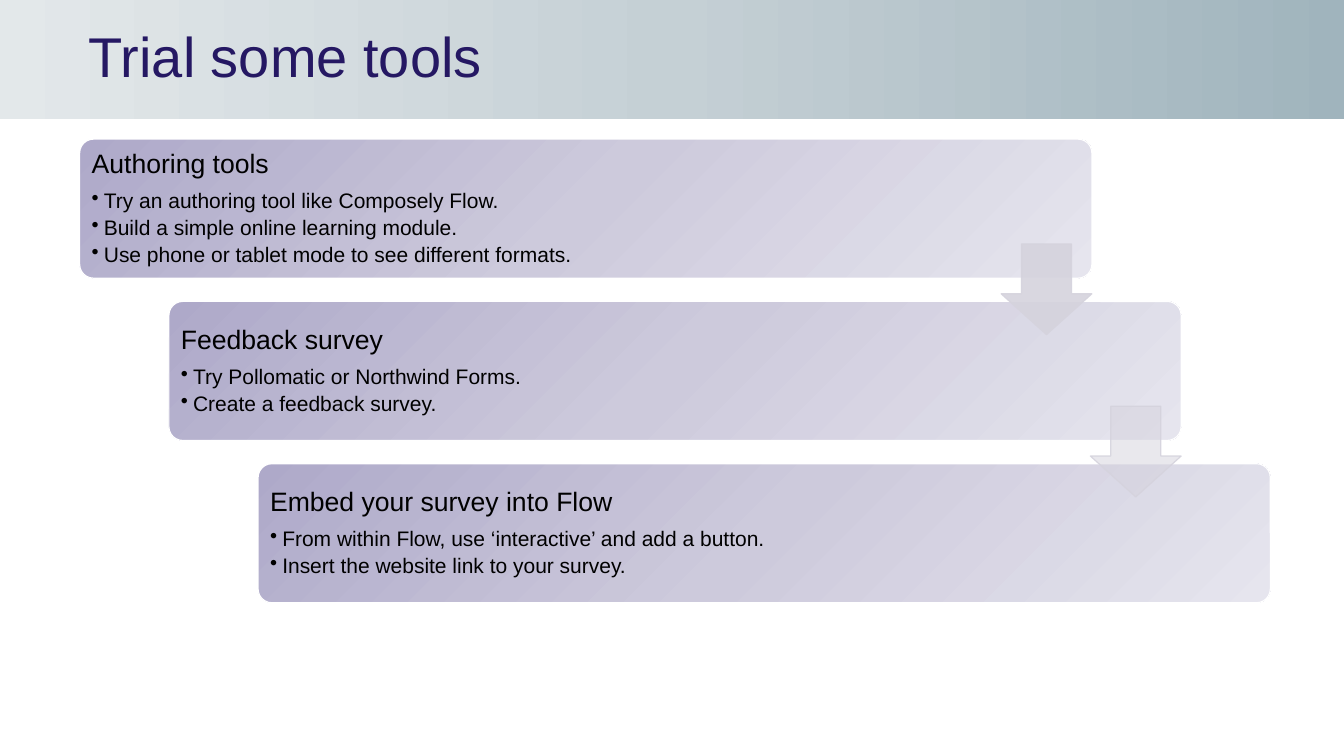
from pptx import Presentation
from pptx.dml.color import RGBColor as RGB
from pptx.enum.shapes import MSO_SHAPE as SHAPE
from pptx.enum.text import MSO_ANCHOR as ANCHOR, PP_ALIGN as ALIGN
from pptx.oxml import parse_xml
from pptx.oxml.ns import nsdecls, qn
from pptx.util import Inches, Pt
from lxml import etree

NAVY = RGB(0x25, 0x18, 0x63)
BLACK = RGB(0, 0, 0)
WHITE = RGB(0xFF, 0xFF, 0xFF)
ARROW_GREY = RGB(0xD5, 0xD3, 0xDD)
BANNER = [RGB(0xA0, 0xB4, 0xBD), RGB(0xC5, 0xD0, 0xD5), RGB(0xE3, 0xE8, 0xEA)]
LILAC = [RGB(0xAE, 0xA9, 0xC9), RGB(0xCD, 0xCA, 0xDC), RGB(0xE6, 0xE5, 0xEE)]

# Heading, text width, bullets
STEPS = [
    ("Authoring tools", 8.55,
     ["Try an authoring tool like Composely Flow.",
      "Build a simple online learning module.",
      "Use phone or tablet mode to see different formats."]),
    ("Feedback survey", 8.17,
     ["Try Pollomatic or Northwind Forms.",
      "Create a feedback survey."]),
    ("Embed your survey into Flow", 8.17,
     ["From within Flow, use ‘interactive’ and add a button.",
      "Insert the website link to your survey."]),
]
STEP_DX, STEP_DY = 0.885, 1.61
ARROW_ALPHAS = [90, 50]


def add_shape(s, kind, x, y, w, h):
    sp = s.shapes.add_shape(kind, Inches(x), Inches(y), Inches(w), Inches(h))
    sp.shadow.inherit = False
    return sp


def set_gradient(sp, colors, angle):
    """Fill with evenly spaced stops; angle is clockwise in degrees."""
    sp.fill.gradient()
    sp.fill.gradient_angle = -angle % 360
    stops = "".join(
        f'<a:gs pos="{i * 50000}"><a:srgbClr val="{color}"/></a:gs>'
        for i, color in enumerate(colors))
    old = next(sp.element.spPr.iter(qn("a:gsLst")))
    old.getparent().replace(
        old, parse_xml(f'<a:gsLst {nsdecls("a")}>{stops}</a:gsLst>'))


def set_alpha(color_format_parent, percent):
    for clr in color_format_parent.iter(qn("a:srgbClr")):
        etree.SubElement(clr, qn("a:alpha")).set("val", str(percent * 1000))


def add_run(p, text, size, color):
    r = p.add_run()
    r.text = text
    r.font.name = "Arial"
    r.font.size = Pt(size)
    r.font.color.rgb = color
    p.line_spacing = 0.9
    p.alignment = ALIGN.LEFT


def set_bullet(p):
    pPr = p._p.get_or_add_pPr()
    pPr.set("marL", str(Inches(0.12)))
    pPr.set("indent", str(-Inches(0.12)))
    etree.SubElement(pPr, qn("a:buChar")).set("char", "•")


def add_title(s, text):
    sp = add_shape(s, SHAPE.RECTANGLE, 0, 0, 13.33, 1.18)
    set_gradient(sp, BANNER, 180)
    sp.line.fill.background()
    tf = sp.text_frame
    tf.margin_left = Inches(0.88)
    tf.vertical_anchor = ANCHOR.MIDDLE
    add_run(tf.paragraphs[0], text, 40, NAVY)


def add_step(s, x, y, heading, text_width, bullets):
    # Card
    card = add_shape(s, SHAPE.ROUNDED_RECTANGLE, x, y, 10.04, 1.38)
    card.adjustments[0] = 0.1
    set_gradient(card, LILAC, 45)
    card.line.color.rgb = WHITE
    card.line.width = Pt(0.85)
    # Text
    box = s.shapes.add_textbox(Inches(x + 0.04), Inches(y + 0.04),
                               Inches(text_width), Inches(1.3))
    tf = box.text_frame
    tf.word_wrap = True
    tf.vertical_anchor = ANCHOR.MIDDLE
    tf.margin_left = tf.margin_right = Inches(0.08)
    tf.margin_top = tf.margin_bottom = Inches(0.08)
    p = tf.paragraphs[0]
    add_run(p, heading, 19, BLACK)
    p.space_after = Pt(8)
    for bullet in bullets:
        p = tf.add_paragraph()
        p.level = 1
        set_bullet(p)
        add_run(p, bullet, 15, BLACK)
        p.space_after = Pt(3)


def add_arrow(s, x, y, alpha):
    sp = add_shape(s, SHAPE.DOWN_ARROW, x, y, 0.9, 0.9)
    sp.adjustments[0] = 0.55
    sp.adjustments[1] = 0.45
    sp.fill.solid()
    sp.fill.fore_color.rgb = ARROW_GREY
    set_alpha(sp.element.spPr, alpha)
    sp.line.color.rgb = ARROW_GREY
    sp.line.width = Pt(0.85)
    set_alpha(sp.element.spPr.find(qn("a:ln")), 90)


def main():
    prs = Presentation()
    prs.slide_width, prs.slide_height = Inches(13.33), Inches(7.5)
    s = prs.slides.add_slide(prs.slide_layouts[6])
    add_title(s, "Trial some tools")
    for i, (heading, width, bullets) in enumerate(STEPS):
        add_step(s, 0.79 + i * STEP_DX, 1.38 + i * STEP_DY,
                 heading, width, bullets)
    for i, alpha in enumerate(ARROW_ALPHAS):
        add_arrow(s, 9.93 + i * STEP_DX, 2.42 + i * STEP_DY, alpha)
    prs.save("out.pptx")


if __name__ == "__main__":
    main()
